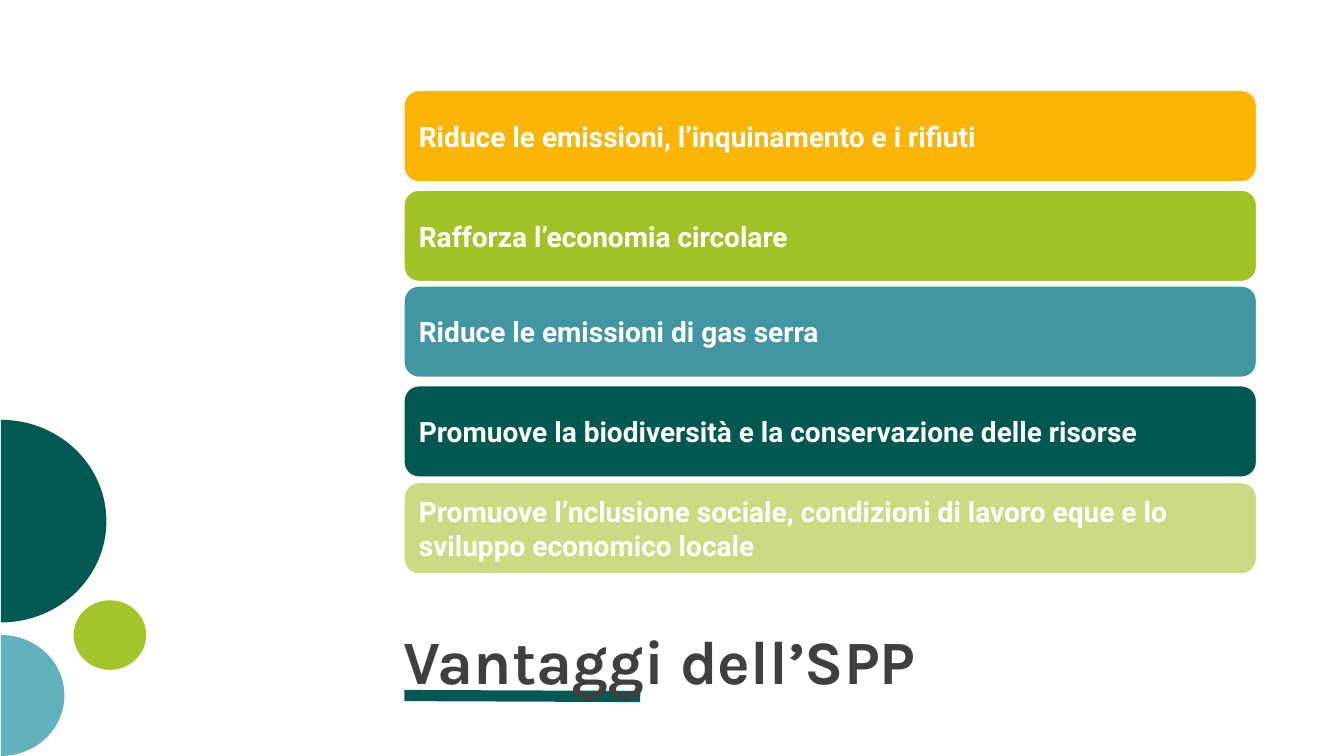
import pptx
import pptx.util
import pptx.dml.color
import pptx.enum.shapes
import pptx.enum.text
import lxml.etree
from dataclasses import dataclass

Inches = pptx.util.Inches
Kind = pptx.enum.shapes.MSO_SHAPE
Anchor = pptx.enum.text.MSO_ANCHOR
LEFT = pptx.enum.text.PP_ALIGN.LEFT


@dataclass
class Theme:
    deep: str = "035854"
    sky: str = "64B1BE"
    lime: str = "A3C42A"
    ink: str = "3F3F3F"
    white: str = "FFFFFF"
    head: str = "Karla"
    body: str = "Roboto"
    big: int = 44
    small: int = 20
    rule: int = 8
    edge: int = 2


theme = Theme()

# Content: title, then bars as top, fill, text
TITLE = "Vantaggi dell’SPP"
BARS = [
    (0.89, "FAB506", "Riduce le emissioni, l’inquinamento e i rifiuti"),
    (1.88, "A2C328", "Rafforza l’economia circolare"),
    (2.83, "4295A2", "Riduce le emissioni di gas serra"),
    (3.82, "005851", "Promuove la biodiversità e la conservazione delle risorse"),
    (4.78, "CBDA83", "Promuove l’nclusione sociale, condizioni di lavoro eque e lo "
                     "sviluppo economico locale"),
]
# Discs: kind, centre x, centre y, width, height, fill
DISCS = [
    (Kind.PIE, 0.01, 5.17, 2.09, 2.01, theme.deep),
    (Kind.PIE, 0.01, 6.9, 1.26, 1.2, theme.sky),
    (Kind.OVAL, 1.09, 6.3, 0.72, 0.69, theme.lime),
]
EDGE, WIDE, TALL = 4, 8.47, 0.92


def tint(code):
    return pptx.dml.color.RGBColor.from_string(code)


def draw(kind, left, top, wide, tall, fill):
    shape = slide.shapes.add_shape(
        kind, Inches(left), Inches(top), Inches(wide), Inches(tall))
    shape.shadow.inherit = False
    shape.fill.solid()
    shape.fill.fore_color.rgb = tint(fill)
    shape.line.fill.background()
    return shape


def write(frame, text, face, size, code, anchor, side=0):
    frame.word_wrap = True
    frame.auto_size = pptx.enum.text.MSO_AUTO_SIZE.NONE
    frame.vertical_anchor = anchor
    frame.margin_left = frame.margin_right = Inches(side)
    frame.margin_top = frame.margin_bottom = 0
    para = frame.paragraphs[0]
    para.alignment = LEFT
    run = para.add_run()
    run.text = text
    run.font.name = face
    run.font.size = pptx.util.Pt(size)
    run.font.bold = True
    run.font.color.rgb = tint(code)
    return para


deck = pptx.Presentation()
deck.slide_width, deck.slide_height = Inches(13.33), Inches(7.5)
slide = deck.slides.add_slide(deck.slide_layouts[5])

# Rule under the title
rule = slide.shapes.add_connector(
    pptx.enum.shapes.MSO_CONNECTOR.STRAIGHT,
    Inches(4.01), Inches(6.9), Inches(6.35), Inches(6.91))
rule.line.color.rgb = tint(theme.deep)
rule.line.width = pptx.util.Pt(theme.rule)
lxml.etree.SubElement(rule._element.spPr, pptx.oxml.ns.qn("a:effectLst"))

# Discs at the left edge; a pie shows its right half
for kind, mid, level, wide, tall, fill in DISCS:
    disc = draw(kind, mid - wide / 2, level - tall / 2, wide, tall, fill)
    if kind == Kind.PIE:
        disc.adjustments[0] = 162
        disc.adjustments[1] = 54

# Title, raised above the rule
title = slide.shapes.title
title.left, title.top = Inches(EDGE), Inches(5.4)
title.width, title.height = Inches(8.68), Inches(1.51)
para = write(title.text_frame, TITLE, theme.head, theme.big, theme.ink,
             Anchor.BOTTOM)
para.line_spacing = 0.8
slide.shapes._spTree.append(title._element)

# Bars
for top, fill, text in BARS:
    bar = draw(Kind.ROUNDED_RECTANGLE, EDGE, top, WIDE, TALL, fill)
    bar.line.color.rgb = tint(theme.white)
    bar.line.width = pptx.util.Pt(theme.edge)
    # The rounded corners add to the inset
    write(bar.text_frame, text, theme.body, theme.small, theme.white,
          Anchor.MIDDLE, 0.11)

deck.save("out.pptx")
